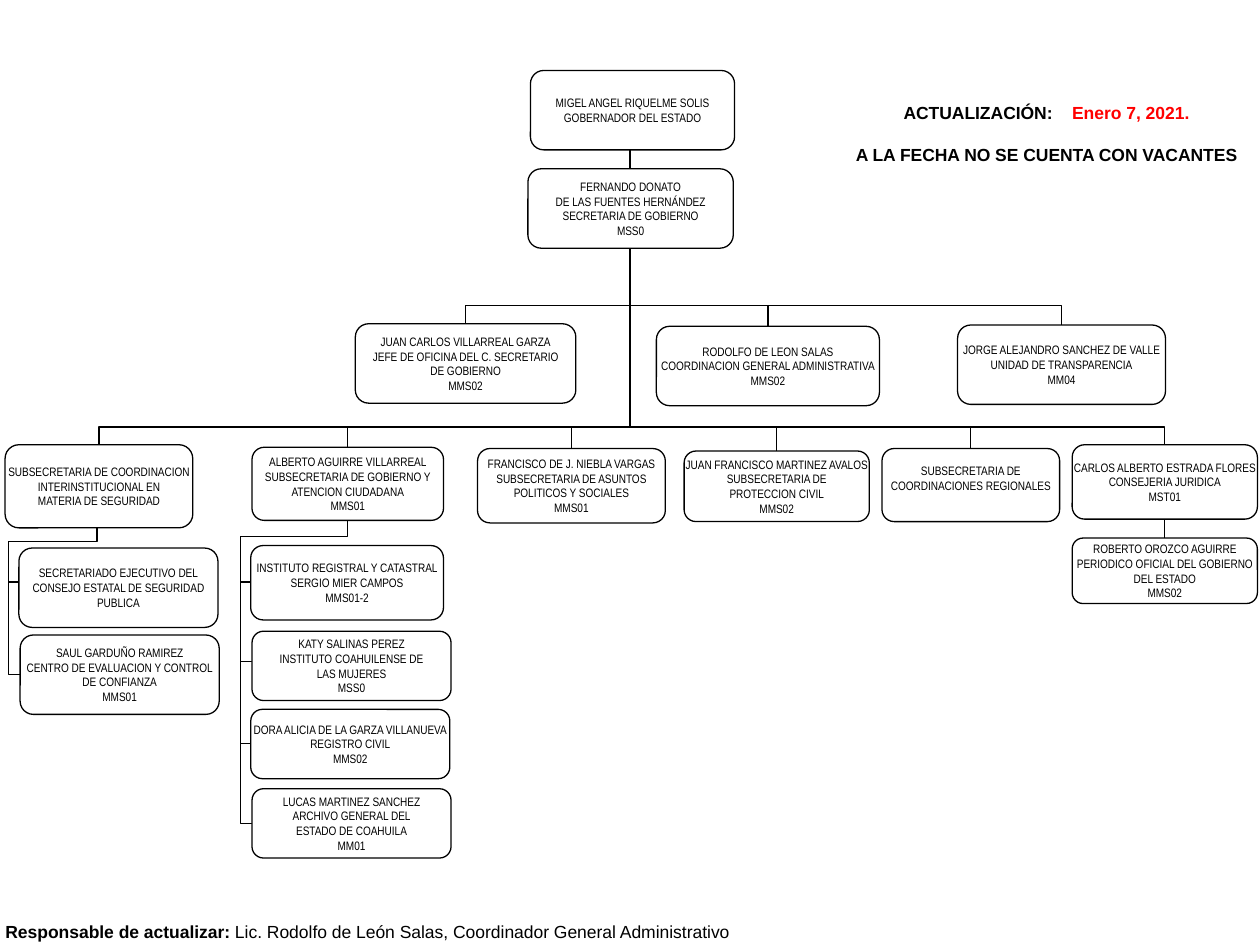
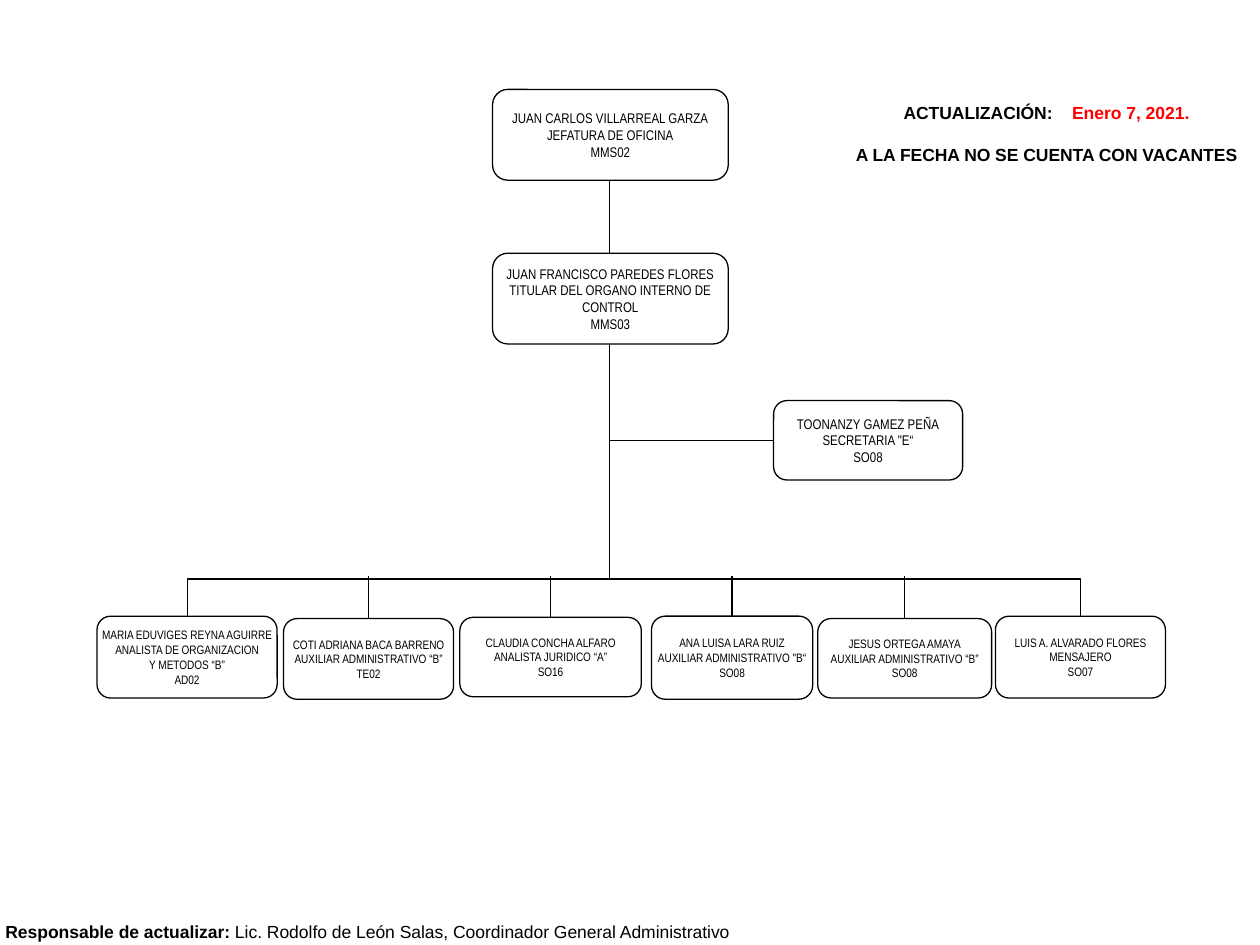
from lxml.etree import SubElement
from pptx import Presentation
from pptx.dml.color import RGBColor
from pptx.enum.shapes import MSO_CONNECTOR, MSO_SHAPE
from pptx.enum.text import MSO_ANCHOR, PP_ALIGN
from pptx.oxml.ns import qn
from pptx.util import Inches, Pt

COLORS = {"ink": "000000", "paper": "FFFFFF", "date": "FF0000"}
TOP, LEFT = 0, 1
NOTE_FONT = {"name": "Arial", "size": Pt(10)}
BOX_FRAME = {"word_wrap": False, "vertical_anchor": MSO_ANCHOR.MIDDLE}

GOVERNMENT_HEADS = [
    (4.21, 0.56, 1.62, 0.63, "MIGEL ANGEL RIQUELME SOLIS\nGOBERNADOR DEL ESTADO"),
    (4.19, 1.34, 1.63, 0.63,
     "FERNANDO DONATO\nDE LAS FUENTES HERNÁNDEZ\nSECRETARIA DE GOBIERNO\nMSS0"),
]
STAFF_OFFICES = [
    (2.82, 2.57, 1.75, 0.63,
     "JUAN CARLOS VILLARREAL GARZA\nJEFE DE OFICINA DEL C. SECRETARIO\nDE GOBIERNO\nMMS02"),
    (5.21, 2.59, 1.77, 0.63,
     "RODOLFO DE LEON SALAS\nCOORDINACION GENERAL ADMINISTRATIVA\nMMS02"),
    (7.6, 2.58, 1.65, 0.63,
     "JORGE ALEJANDRO SANCHEZ DE VALLE\nUNIDAD DE TRANSPARENCIA\nMM04"),
]
UNDERSECRETARIES = [
    (0.04, 3.53, 1.49, 0.66,
     "SUBSECRETARIA DE COORDINACION\nINTERINSTITUCIONAL EN\nMATERIA DE SEGURIDAD"),
    (2, 3.55, 1.52, 0.58,
     "ALBERTO AGUIRRE VILLARREAL\nSUBSECRETARIA DE GOBIERNO Y\nATENCION CIUDADANA\nMMS01"),
    (3.79, 3.56, 1.49, 0.59,
     "FRANCISCO DE J. NIEBLA VARGAS\nSUBSECRETARIA DE ASUNTOS\nPOLITICOS Y SOCIALES\nMMS01"),
    (5.43, 3.58, 1.47, 0.56,
     "JUAN FRANCISCO MARTINEZ AVALOS\nSUBSECRETARIA DE\nPROTECCION CIVIL\nMMS02"),
    (7, 3.56, 1.41, 0.58, "SUBSECRETARIA DE\nCOORDINACIONES REGIONALES"),
]
LEGAL = (8.51, 3.53, 1.47, 0.59, "CARLOS ALBERTO ESTRADA FLORES\nCONSEJERIA JURIDICA\nMST01")
GAZETTE = (8.51, 4.27, 1.47, 0.52,
           "ROBERTO OROZCO AGUIRRE\nPERIODICO OFICIAL DEL GOBIERNO\nDEL ESTADO\nMMS02")
SECURITY_UNITS = [
    (0.15, 4.35, 1.58, 0.63,
     "SECRETARIADO EJECUTIVO DEL\nCONSEJO ESTATAL DE SEGURIDAD\nPUBLICA"),
    (0.16, 5.04, 1.58, 0.63,
     "SAUL GARDUÑO RAMIREZ\nCENTRO DE EVALUACION Y CONTROL\nDE CONFIANZA\nMMS01"),
]
CITIZEN_UNITS = [
    (1.99, 4.33, 1.53, 0.59, "INSTITUTO REGISTRAL Y CATASTRAL\nSERGIO MIER CAMPOS\nMMS01-2"),
    (2, 5.01, 1.58, 0.55,
     "KATY SALINAS PEREZ\nINSTITUTO COAHUILENSE DE\nLAS MUJERES\nMSS0"),
    (1.99, 5.63, 1.58, 0.55, "DORA ALICIA DE LA GARZA VILLANUEVA\nREGISTRO CIVIL\nMMS02"),
    (2, 6.26, 1.58, 0.55,
     "LUCAS MARTINEZ SANCHEZ\nARCHIVO GENERAL DEL\nESTADO DE COAHUILA\nMM01"),
]

OFFICE_HEADS = [
    (3.91, 0.71, 1.87, 0.72, "JUAN CARLOS VILLARREAL GARZA\nJEFATURA DE OFICINA\nMMS02"),
    (3.91, 2.01, 1.87, 0.72,
     "JUAN FRANCISCO PAREDES FLORES\nTITULAR DEL ORGANO INTERNO DE\nCONTROL\nMMS03"),
]
SECRETARY = (6.14, 3.18, 1.5, 0.63, "TOONANZY GAMEZ PEÑA\nSECRETARIA \"E“\nSO08")
OFFICE_STAFF = [
    (0.77, 4.89, 1.43, 0.65,
     "MARIA EDUVIGES REYNA AGUIRRE\nANALISTA DE ORGANIZACION\nY METODOS “B”\nAD02"),
    (2.25, 4.91, 1.35, 0.64, "COTI ADRIANA BACA BARRENO\nAUXILIAR ADMINISTRATIVO “B”\nTE02"),
    (3.65, 4.9, 1.44, 0.63, "CLAUDIA CONCHA ALFARO\nANALISTA JURIDICO “A”\nSO16"),
    (5.17, 4.89, 1.28, 0.66, "ANA LUISA LARA RUIZ\nAUXILIAR ADMINISTRATIVO \"B“\nSO08"),
    (6.49, 4.91, 1.38, 0.63, "JESUS ORTEGA AMAYA\nAUXILIAR ADMINISTRATIVO “B”\nSO08"),
    (7.9, 4.89, 1.35, 0.65, "LUIS A. ALVARADO FLORES\nMENSAJERO\nSO07"),
]


def color(name):
    """Return a palette colour."""
    return RGBColor.from_string(COLORS[name])


def apply(target, values):
    """Set every named attribute on the target."""
    for name, value in values.items():
        setattr(target, name, value)


def add_span(para, text, bold=True, ink="ink"):
    """Add one run of note text."""
    span = para.add_run()
    span.text = text
    apply(span.font, {**NOTE_FONT, "bold": bold})
    span.font.color.rgb = color(ink)
    return span


def add_note(page, left, top, width, height):
    """Add a wrapping text box with a centred paragraph and return its frame."""
    frame = page.shapes.add_textbox(*map(Inches, (left, top, width, height))).text_frame
    frame.word_wrap = True
    frame.paragraphs[0].alignment = PP_ALIGN.CENTER
    return frame


def add_update_note(page):
    """Add the update date and the vacancy statement."""
    frame = add_note(page, 6.59, 0.76, 3.43, 0.61)
    date = frame.paragraphs[0]
    add_span(date, "ACTUALIZACIÓN:")
    gap = add_span(date, " ")
    gap._r.get_or_add_rPr().set("spc", "834")
    add_span(date, "Enero 7, 2021.", ink="date")
    vacancies = frame.add_paragraph()
    apply(vacancies, {"alignment": PP_ALIGN.CENTER, "space_before": Pt(12)})
    add_span(vacancies, "A LA FECHA NO SE CUENTA CON VACANTES")


def add_footer(page):
    """Add the name of the person who keeps the chart current."""
    frame = add_note(page, 0, 7.26, 5.83, 0.24)
    apply(frame, {"margin_left": 0, "margin_right": 0})
    para = frame.paragraphs[0]
    add_span(para, "Responsable de actualizar: ")
    add_span(para, "Lic. Rodolfo de León Salas, Coordinador General Administrativo", bold=False)


def add_page(deck):
    """Add a blank page with the shared notes."""
    page = deck.slides.add_slide(deck.slide_layouts[6])
    add_footer(page)
    add_update_note(page)
    return page


def add_box(page, entry, size=7, kind=MSO_SHAPE.ROUNDED_RECTANGLE):
    """Add one post of the chart."""
    *place, text = entry
    box = page.shapes.add_shape(kind, *map(Inches, place))
    box.shadow.inherit = False
    box.fill.solid()
    box.fill.fore_color.rgb = color("paper")
    box.line.color.rgb = color("ink")
    box.line.width = Pt(0.75)
    apply(box.text_frame, BOX_FRAME)
    box.text_frame.text = text
    for para in box.text_frame.paragraphs:
        para.alignment = PP_ALIGN.CENTER
        apply(para.font, {"name": "Arial Narrow", "size": Pt(size)})
        para.font.color.rgb = color("ink")
    return box


def add_row(page, entries, size=7):
    """Add several posts and return their boxes."""
    return [add_box(page, entry, size) for entry in entries]


def top_point(box):
    """Return the middle of the top side."""
    return box.left + box.width // 2, box.top


def add_line(page, begin, end, kind=MSO_CONNECTOR.STRAIGHT):
    """Draw a thin connector between two points."""
    line = page.shapes.add_connector(kind, *begin, *end)
    line.line.color.rgb = color("ink")
    line.line.width = Pt(0.75)
    SubElement(line._element.spPr, qn("a:effectLst"))
    return line


def add_elbow(page, begin, end, preset, turn, bends, flip=False):
    """Draw a bent connector that leaves its begin point vertically."""
    (x1, y1), (x2, y2) = begin, end
    length, breadth = abs(y2 - y1), abs(x2 - x1)
    left = (x1 + x2 - length) // 2
    top = (y1 + y2 - breadth) // 2
    elbow = add_line(page, (left, top), (left + length, top + breadth), MSO_CONNECTOR.ELBOW)
    elbow.rotation = turn
    properties = elbow._element.spPr
    if flip:
        properties.find(qn("a:xfrm")).set("flipH", "1")
    geometry = properties.find(qn("a:prstGeom"))
    geometry.set("prst", preset)
    guides = geometry.find(qn("a:avLst"))
    for number, bend in enumerate(bends, 1):
        SubElement(guides, qn("a:gd"), name=f"adj{number}", fmla=f"val {round(bend * 100000)}")


def add_arch(page, begin, end, y):
    """Span two tops by a line that rises to a height; the end lies lower."""
    bend = (y - begin[1]) / (end[1] - begin[1])
    add_elbow(page, begin, end, "bentConnector3", 270, [bend], flip=True)


def add_drops(page, boxes, y):
    """Hang boxes from a level line."""
    for box in boxes:
        x, top = top_point(box)
        add_line(page, (x, y), (x, top)).end_connect(box, TOP)


def add_rail(page, begin, units, rail, y, branches):
    """Hang a column of units from a rail, with branches behind the boxes."""
    left, top, _, height, _ = units[-1]
    end = Inches(left), Inches(top + height / 2)
    bends = (y - begin[1]) / (end[1] - begin[1]), (begin[0] - rail) / (begin[0] - end[0])
    add_elbow(page, begin, end, "bentConnector4", 90, bends)
    for branch in map(Inches, branches):
        add_line(page, (rail, branch), (rail + Inches(0.2), branch))
    add_row(page, units)


def build_government(deck):
    """Build the chart of the government secretariat."""
    page = add_page(deck)
    trunk, upper_bus, lower_bus = Inches(5), Inches(2.42), Inches(3.39)
    add_line(page, (trunk, Inches(0.83)), (trunk, lower_bus))
    add_row(page, GOVERNMENT_HEADS)
    first, middle, last = add_row(page, STAFF_OFFICES)
    add_arch(page, top_point(first), top_point(last), upper_bus)
    add_drops(page, [middle], upper_bus)
    areas = add_row(page, UNDERSECRETARIES)
    areas[-1].text_frame.margin_bottom = Inches(0.16)
    gazette = add_box(page, GAZETTE, kind=MSO_SHAPE.FLOWCHART_ALTERNATE_PROCESS)
    add_arch(page, top_point(areas[0]), top_point(gazette), lower_bus)
    add_drops(page, areas[1:], lower_bus)
    add_box(page, LEGAL)
    add_rail(page, (Inches(0.77), Inches(4.19)), SECURITY_UNITS,
             Inches(0.07), Inches(4.3), [4.62])
    add_rail(page, (Inches(2.76), Inches(4.13)), CITIZEN_UNITS,
             Inches(1.91), Inches(4.26), [4.62, 5.25, 5.9])


def build_office(deck):
    """Build the chart of the head of office."""
    page = add_page(deck)
    trunk, bus = Inches(4.84), Inches(4.59)
    add_line(page, (trunk, Inches(1.14)), (trunk, bus))
    add_row(page, OFFICE_HEADS, 8)
    secretary = add_box(page, SECRETARY, 8)
    level = secretary.top + secretary.height // 2
    add_line(page, (trunk, level), (secretary.left, level)).end_connect(secretary, LEFT)
    first, *middle, last = add_row(page, OFFICE_STAFF)
    x, top = top_point(last)
    add_arch(page, top_point(first), (x, top + Inches(0.01)), bus)
    add_drops(page, middle, Inches(4.57))


def main():
    """Build and save the deck."""
    deck = Presentation()
    apply(deck, {"slide_width": Inches(10), "slide_height": Inches(7.5)})
    build_government(deck)
    build_office(deck)
    deck.save("out.pptx")


if __name__ == "__main__":
    main()
